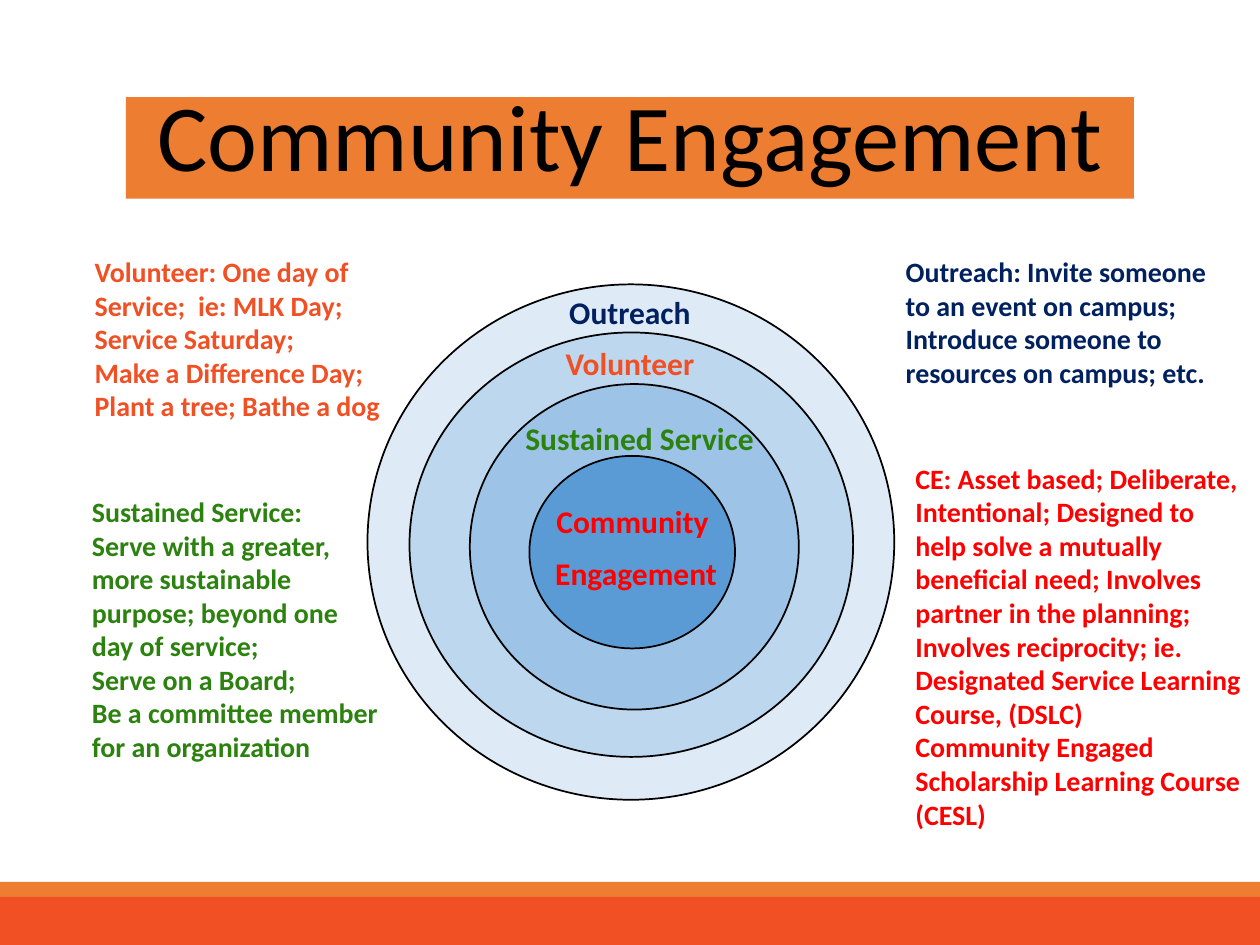
from pptx import Presentation
from pptx.dml.color import RGBColor
from pptx.enum.shapes import MSO_SHAPE
from pptx.enum.text import MSO_ANCHOR, MSO_AUTO_SIZE, PP_ALIGN
from pptx.util import Pt

BLACK = RGBColor(0x00, 0x00, 0x00)
ORANGE = RGBColor(0xED, 0x7D, 0x31)
FLAME = RGBColor(0xF0, 0x50, 0x23)
GREEN = RGBColor(0x2C, 0x82, 0x0E)
NAVY = RGBColor(0x00, 0x20, 0x60)
RED = RGBColor(0xFF, 0x00, 0x00)
BLUES = [RGBColor(0xDE, 0xEB, 0xF7), RGBColor(0xBD, 0xD7, 0xEE),
         RGBColor(0x9D, 0xC3, 0xE6), RGBColor(0x5B, 0x9B, 0xD5)]

RINGS = [(210, 162.5, 301, 294.5), (234, 190, 253.5, 242.5),
         (268.5, 219.5, 188, 186), (302.5, 260.5, 117.5, 110)]

LABELS = [
    ((296, 168.5, 128, 24), NAVY, 0.8, ["Outreach"]),
    ((296, 198, 128, 24), FLAME, 0.8, ["Volunteer"]),
    ((294, 239, 143, 24), GREEN, 0.9, ["Sustained Service"]),
    ((276.5, 286.5, 174, 130), RED, 0.9, ["Community ", "Engagement"]),
]

NOTES = [
    ((510.5, 142, 188, 85), NAVY,
     ["Outreach: Invite someone to an event on campus; Introduce someone "
      "to resources on campus; etc."]),
    ((47, 142, 180.5, 104.5), FLAME,
     ["Volunteer: One day of Service;  ie: MLK Day;",
      "Service Saturday;",
      "Make a Difference Day; Plant a tree; Bathe a dog"]),
    ((45.5, 279, 180, 178.5), GREEN,
     ["Sustained Service:\vServe with a greater, more sustainable purpose; "
      "beyond one day of service;",
      "Serve on a Board;",
      "Be a committee member for an organization"]),
    ((516, 260, 204, 220), RED,
     ["CE: Asset based; Deliberate, Intentional; Designed to help solve a "
      "mutually beneficial need; Involves partner in the planning; "
      "Involves reciprocity; ie.",
      "Designated Service Learning Course, (DSLC)",
      "Community Engaged Scholarship Learning Course (CESL)"]),
]


def apply(target, values):
    for name, value in values.items():
        setattr(target, name, value)


class Painter:
    font = "Calibri"
    tight = {"margin_left": Pt(5), "margin_right": Pt(5),
             "margin_top": Pt(3), "margin_bottom": Pt(3)}

    def __init__(self, slide):
        self.slide = slide

    def shape(self, kind, box, fill, line=None):
        item = self.slide.shapes.add_shape(kind, *map(Pt, box))
        item.shadow.inherit = False
        item.fill.solid()
        item.fill.fore_color.rgb = fill
        if line is None:
            item.line.fill.background()
        else:
            item.line.color.rgb = line
            item.line.width = Pt(1)
        return item

    def ring(self, box, fill):
        self.shape(MSO_SHAPE.OVAL, box, fill, BLACK)

    def bar(self, box, fill):
        return self.shape(MSO_SHAPE.RECTANGLE, box, fill)

    def letter(self, frame, lines, size, color, bold, style):
        """Fill a text frame with one paragraph for each line."""
        frame.word_wrap = True
        for i, line in enumerate(lines):
            para = frame.add_paragraph() if i else frame.paragraphs[0]
            para.text = line
            apply(para, style)
            for run in para.runs:
                apply(run.font, {"name": self.font, "size": Pt(size), "bold": bold})
                run.font.color.rgb = color

    def title(self, box, text):
        frame = self.bar(box, ORANGE).text_frame
        frame.vertical_anchor = MSO_ANCHOR.BOTTOM
        self.letter(frame, [text], 54, BLACK, False,
                    {"alignment": PP_ALIGN.CENTER, "line_spacing": 0.9})

    def label(self, box, color, pitch, lines):
        frame = self.slide.shapes.add_textbox(*map(Pt, box)).text_frame
        apply(frame, self.tight)
        self.letter(frame, lines, 18, color, True,
                    {"alignment": PP_ALIGN.CENTER, "line_spacing": pitch,
                     "space_before": Pt(10)})

    def note(self, box, color, lines):
        frame = self.slide.shapes.add_textbox(*map(Pt, box)).text_frame
        frame.auto_size = MSO_AUTO_SIZE.SHAPE_TO_FIT_TEXT
        self.letter(frame, lines, 16, color, True, {"alignment": PP_ALIGN.LEFT})


def main():
    deck = Presentation()
    apply(deck, {"slide_width": Pt(720), "slide_height": Pt(540)})
    paint = Painter(deck.slides.add_slide(deck.slide_layouts[6]))

    for box, blue in zip(RINGS, BLUES):
        paint.ring(box, blue)
    paint.title((72, 55.5, 576, 58), "Community Engagement")
    for label in LABELS:
        paint.label(*label)
    for note in NOTES:
        paint.note(*note)
    paint.bar((0, 504, 720, 28), ORANGE)
    paint.bar((0, 512.5, 720, 27.5), FLAME)

    deck.save("out.pptx")


if __name__ == "__main__":
    main()
